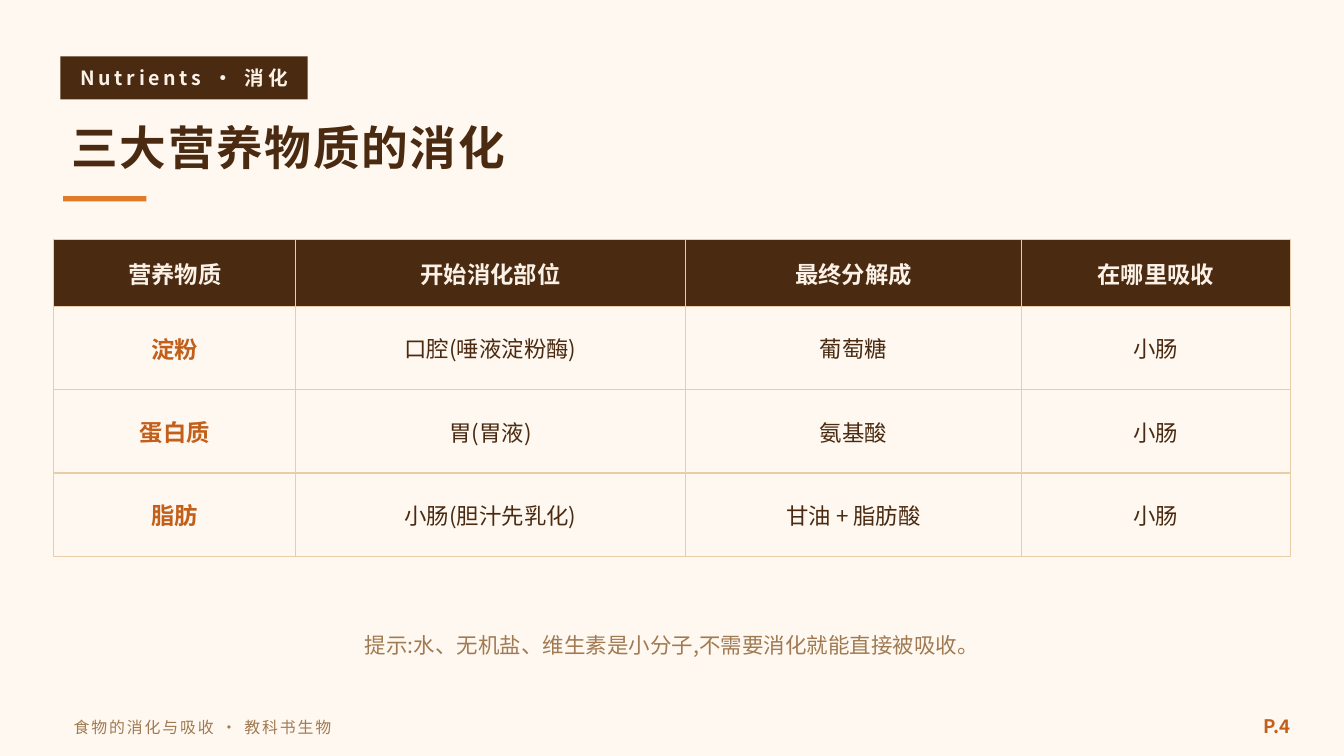
from pptx import Presentation
from pptx.dml.color import RGBColor as RGB
from pptx.enum.shapes import MSO_SHAPE as Kind
from pptx.enum.text import MSO_ANCHOR as Anchor, MSO_AUTO_SIZE as Fit, PP_ALIGN as Align
from pptx.oxml import parse_xml
from pptx.oxml.ns import nsdecls
from pptx.util import Inches, Pt

FONT = "Noto Sans CJK SC"
HEX = {
    "paper": "FFF8F0", "brown": "4A2A10", "cream": "FBF1E6", "amber": "E07B2C",
    "rust": "C25F1A", "tan": "A07A52", "line": "E8CDA8",
}

deck = Presentation()
deck.slide_width, deck.slide_height = Inches(10), Inches(5.625)
unit = deck.slide_width / 100  # the grid has 100 columns, with square cells
slide = deck.slides.add_slide(deck.slide_layouts[5])
slide.background.fill.solid()
slide.background.fill.fore_color.rgb = RGB.from_string(HEX["paper"])


def grid(*cells):
    """Turn grid counts into lengths."""
    return [round(n * unit) for n in cells]


def write(frame, text, size, tint, bold=False, align=Align.LEFT, gap=0):
    """Fill a text frame with one run; gap is the letter spacing in points."""
    para = frame.paragraphs[0]
    para.alignment = align
    run = para.add_run()
    run.text = text
    look = {"size": Pt(size), "bold": bold, "name": FONT}
    for key, value in look.items():
        setattr(run.font, key, value)
    run.font.color.rgb = RGB.from_string(HEX[tint])
    props = run.font._element
    props.append(parse_xml(f'<a:ea {nsdecls("a")} typeface="{FONT}"/>'))
    if gap:
        props.set("spc", str(gap * 100))


# Tag background and title rule
for spot, tint in [((4.5, 4.2, 18.4, 3.2), "brown"), ((4.7, 14.6, 6.2, 0.4), "amber")]:
    bar = slide.shapes.add_shape(Kind.RECTANGLE, *grid(*spot))
    bar.shadow.inherit = False
    bar.fill.solid()
    bar.fill.fore_color.rgb = RGB.from_string(HEX[tint])
    bar.line.fill.background()

# Title, tag, tip and footer
title = slide.shapes.title
title.left, title.top, title.width, title.height = grid(4.3, 7.8, 90, 6.2)
texts = [
    (title, "三大营养物质的消化", 25, "brown", True, Align.LEFT, 1),
    ((4.5, 4.1, 18.4, 3.4), "Nutrients · 消化", 10.5, "cream", True, Align.CENTER, 2),
    ((5, 45.5, 90, 5), "提示:水、无机盐、维生素是小分子,不需要消化就能直接被吸收。",
     11.5, "tan", False, Align.CENTER, 0),
    ((4.5, 52.6, 65, 3), "食物的消化与吸收 · 教科书生物", 8.5, "tan", False, Align.LEFT, 1),
    ((91, 52.4, 6, 3.2), "P.4", 10, "rust", True, Align.RIGHT, 0),
]
for place, *style in texts:
    box = place if place is title else slide.shapes.add_textbox(*grid(*place))
    frame = box.text_frame
    setup = {"word_wrap": True, "auto_size": Fit.NONE, "vertical_anchor": Anchor.MIDDLE}
    for key, value in setup.items():
        setattr(frame, key, value)
    write(frame, *style)

# Table of nutrients
rows = [
    ["营养物质", "开始消化部位", "最终分解成", "在哪里吸收"],
    ["淀粉", "口腔(唾液淀粉酶)", "葡萄糖", "小肠"],
    ["蛋白质", "胃(胃液)", "氨基酸", "小肠"],
    ["脂肪", "小肠(胆汁先乳化)", "甘油 + 脂肪酸", "小肠"],
]
wide, high = [18, 29, 25, 20], [5] + [6.2] * 3
spot = grid(4, 17.8, sum(wide), sum(high))
table = slide.shapes.add_table(len(rows), len(wide), *spot).table
for col, size in zip(table.columns, grid(*wide)):
    col.width = size
for row, size in zip(table.rows, grid(*high)):
    row.height = size

for r, row in enumerate(rows):
    for c, text in enumerate(row):
        cell = table.cell(r, c)
        cell.vertical_anchor = Anchor.MIDDLE
        for side in "LRTB":
            cell._tc.get_or_add_tcPr().append(parse_xml(
                f'<a:ln{side} {nsdecls("a")} w="{Pt(0.75)}"><a:solidFill>'
                f'<a:srgbClr val="{HEX["line"]}"/></a:solidFill></a:ln{side}>'))
        cell.fill.solid()
        cell.fill.fore_color.rgb = RGB.from_string(HEX["paper" if r else "brown"])
        bold = r == 0 or c == 0
        tint = "cream" if r == 0 else "rust" if c == 0 else "brown"
        write(cell.text_frame, text, 12.5 if bold else 12, tint, bold, Align.CENTER)

deck.save("out.pptx")
